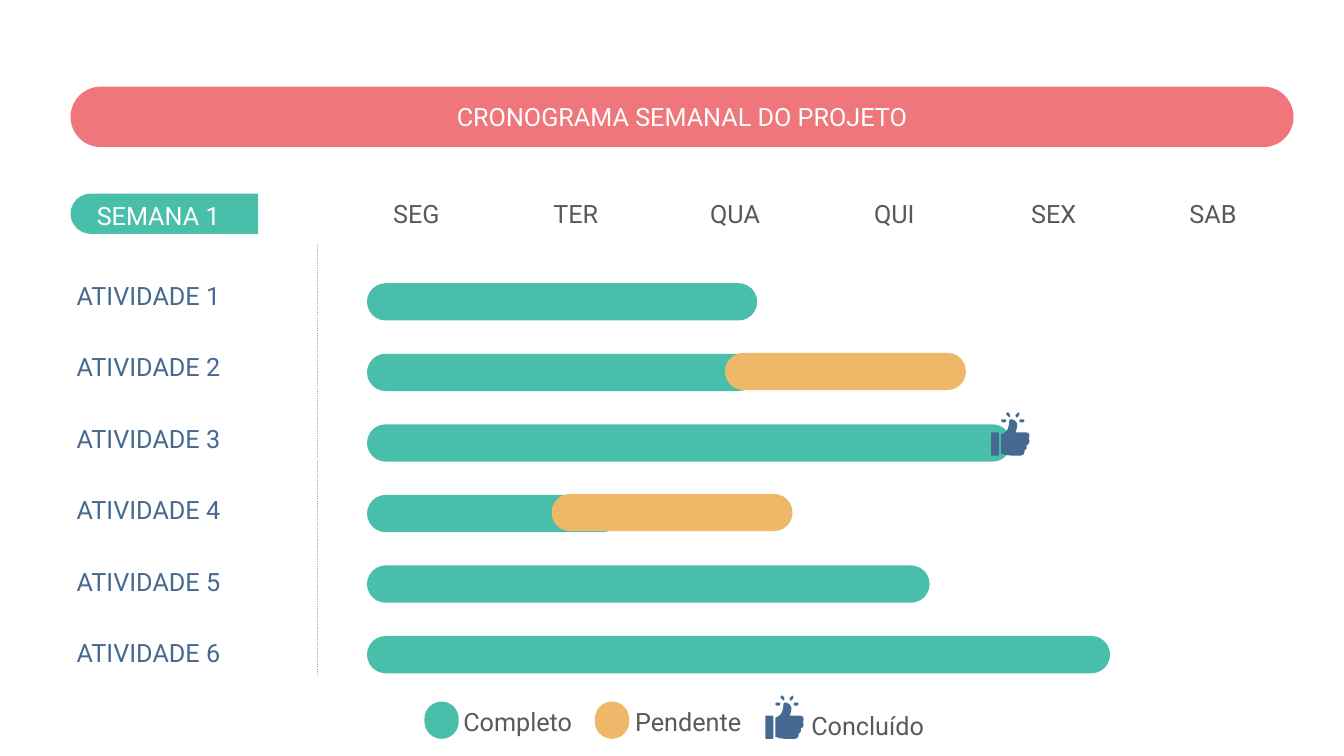
import dataclasses

import lxml.etree
import pptx
import pptx.dml.color
import pptx.enum.shapes
import pptx.enum.text
import pptx.oxml.ns
import pptx.util

Inches = pptx.util.Inches
ShapeType = pptx.enum.shapes.MSO_SHAPE
Anchor = pptx.enum.text.MSO_ANCHOR
Align = pptx.enum.text.PP_ALIGN


@dataclasses.dataclass(frozen=True)
class Theme:
    font: str = "Roboto"
    size: int = 18
    title: str = "EF767A"
    complete: str = "49BEAA"
    pending: str = "EEB868"
    accent: str = "456990"
    text: str = "595959"
    light: str = "FFFFFF"
    divider: str = "A6A6A6"


THEME = Theme()
DAYS = ["SEG", "TER", "QUA", "QUI", "SEX", "SAB"]
COMPLETE_WIDTHS = [3.87, 3.87, 6.39, 2.52, 5.58, 7.37]
PENDING_STARTS = {1: 7.19, 3: 5.47}
PENDING_WIDTH = 2.39
BAR_LEFT, BAR_TOP, BAR_STEP, BAR_HEIGHT = 3.64, 2.81, 0.7, 0.37

HAND = [
    (19, 7), (19, 7, 18, 8, 18, 9), (18, 12, 17, 17, 15, 19),
    (13, 21, 12, 21, 10, 22), (10, 41), (13, 42, 16, 43, 21, 43), (29, 43),
    (32, 43, 34, 40, 33, 38), (35, 37, 36, 35, 35, 33),
    (38, 32, 39, 28, 37, 26), (38, 26, 38, 25, 38, 23),
    (38, 21, 36, 20, 34, 20), (24, 20), (25, 19, 26, 14, 26, 13),
    (26, 10, 23, 7, 20, 7),
]
LEFT_SPARK = [(17, 0), (16, 0), (15, 2), (17, 4), (18, 5), (19, 4), (19, 3), (18, 1)]
RIGHT_SPARK = [(27, 0), (26, 1), (24, 3), (25, 5), (26, 5), (27, 4), (28, 2), (28, 1)]


def flatten(outline, steps=6):
    points = [outline[0]]
    for segment in outline[1:]:
        if len(segment) == 2:
            points.append(segment)
            continue
        controls = [points[-1], segment[:2], segment[2:4], segment[4:]]
        for step in range(1, steps + 1):
            t = step / steps
            weights = [(1 - t) ** 3, 3 * t * (1 - t) ** 2, 3 * t * t * (1 - t), t ** 3]
            points.append(tuple(
                sum(weight * point[axis] for weight, point in zip(weights, controls))
                for axis in (0, 1)))
    return points


class ScheduleSlide:
    def __init__(self, slide, theme):
        self.slide = slide
        self.theme = theme

    def paint(self, shape, color):
        shape.shadow.inherit = False
        shape.fill.solid()
        shape.fill.fore_color.rgb = pptx.dml.color.RGBColor.from_string(color)
        shape.line.fill.background()

    def set_text(self, frame, text, color, alignment):
        paragraph = frame.paragraphs[0]
        paragraph.text = text
        paragraph.alignment = alignment
        paragraph.font.name = self.theme.font
        paragraph.font.size = pptx.util.Pt(self.theme.size)
        paragraph.font.color.rgb = pptx.dml.color.RGBColor.from_string(color)

    def pill(self, left, top, width, height, color, radius=0.5, shapes=None):
        shape = (shapes or self.slide.shapes).add_shape(
            ShapeType.ROUNDED_RECTANGLE,
            Inches(left), Inches(top), Inches(width), Inches(height))
        shape.adjustments[0] = radius
        self.paint(shape, color)
        return shape

    def title(self, text):
        shape = self.pill(0.7, 0.86, 12.13, 0.6, self.theme.title)
        shape.text_frame.vertical_anchor = Anchor.MIDDLE
        self.set_text(shape.text_frame, text, self.theme.light, Align.CENTER)

    def label(self, text, left, top, width, color):
        box = self.slide.shapes.add_textbox(
            Inches(left), Inches(top), Inches(width), Inches(0.4))
        box.text_frame.word_wrap = True
        self.set_text(box.text_frame, text, color, Align.CENTER)

    def week_tab(self, text):
        tab = self.slide.shapes.add_shape(
            ShapeType.ROUND_2_SAME_RECTANGLE,
            Inches(1.43), Inches(1.19), Inches(0.4), Inches(1.86))
        tab.rotation = 270
        tab.adjustments[0] = 0.5
        tab.adjustments[1] = 0
        self.paint(tab, self.theme.complete)
        self.label(text, 0.76, 1.94, 1.62, self.theme.light)

    def border(self, cell, side, color, points, dash="solid"):
        qualify = pptx.oxml.ns.qn
        properties = cell._tc.get_or_add_tcPr()
        line = lxml.etree.SubElement(
            properties, qualify("a:ln" + side), w=str(pptx.util.Pt(points)))
        fill = lxml.etree.SubElement(line, qualify("a:solidFill"))
        lxml.etree.SubElement(fill, qualify("a:srgbClr"), val=color)
        lxml.etree.SubElement(line, qualify("a:prstDash"), val=dash)

    def activity_table(self, count):
        table = self.slide.shapes.add_table(
            count, len(DAYS) + 1,
            Inches(0.66), Inches(2.43), Inches(12.18), Inches(4.27)).table
        table.first_row = False
        table.horz_banding = False
        for index, column in enumerate(table.columns):
            column.width = Inches(1.61 if index else 2.49)
        for row_index, row in enumerate(table.rows):
            row.height = Inches(0.71)
            for column_index, cell in enumerate(row.cells):
                for side in "LRTB":
                    if (column_index, side) in [(0, "R"), (1, "L")]:
                        self.border(cell, side, self.theme.divider, 0.5, "sysDot")
                    else:
                        self.border(cell, side, self.theme.light, 1)
                cell.fill.background()
            name = table.cell(row_index, 0)
            name.vertical_anchor = Anchor.BOTTOM
            self.set_text(name.text_frame, f"ATIVIDADE {row_index + 1}",
                          self.theme.accent, Align.LEFT)

    def thumb(self, left, top):
        shapes = self.slide.shapes.add_group_shape().shapes
        for x, y, width, height, radius in [
                (0, 20, 8, 23, 0.12), (10, 7, 5, 3, 0.5), (28, 7, 5, 3, 0.5)]:
            self.pill(left + x / 100, top + y / 100, width / 100, height / 100,
                      self.theme.accent, radius, shapes)
        for outline in (HAND, LEFT_SPARK, RIGHT_SPARK):
            points = [(Inches(left + x / 100), Inches(top + y / 100))
                      for x, y in flatten(outline)]
            builder = shapes.build_freeform(*points[0])
            builder.add_line_segments(points[1:], close=True)
            self.paint(builder.convert_to_shape(), self.theme.accent)


def main():
    presentation = pptx.Presentation()
    presentation.slide_width = Inches(13.33)
    presentation.slide_height = Inches(7.5)
    schedule = ScheduleSlide(
        presentation.slides.add_slide(presentation.slide_layouts[6]), THEME)

    schedule.title("CRONOGRAMA SEMANAL DO PROJETO")
    schedule.activity_table(len(COMPLETE_WIDTHS))
    schedule.week_tab("SEMANA 1")
    for index, day in enumerate(DAYS):
        schedule.label(day, 3.54 + 1.58 * index, 1.92, 1.18, THEME.text)

    for index, width in enumerate(COMPLETE_WIDTHS):
        top = BAR_TOP + BAR_STEP * index
        schedule.pill(BAR_LEFT, top, width, BAR_HEIGHT, THEME.complete)
        if index in PENDING_STARTS:
            schedule.pill(PENDING_STARTS[index], top - 0.01, PENDING_WIDTH,
                          BAR_HEIGHT, THEME.pending)
    schedule.thumb(9.83, 4.09)

    for text, left, color in [("Completo", 4.21, THEME.complete),
                              ("Pendente", 5.9, THEME.pending)]:
        schedule.pill(left, 6.96, 0.34, BAR_HEIGHT, color)
        schedule.label(text, left + 0.17, 6.96, 1.51, THEME.text)
    schedule.thumb(7.59, 6.9)
    schedule.label("Concluído", 7.85, 7, 1.51, THEME.text)

    presentation.save("out.pptx")


if __name__ == "__main__":
    main()
